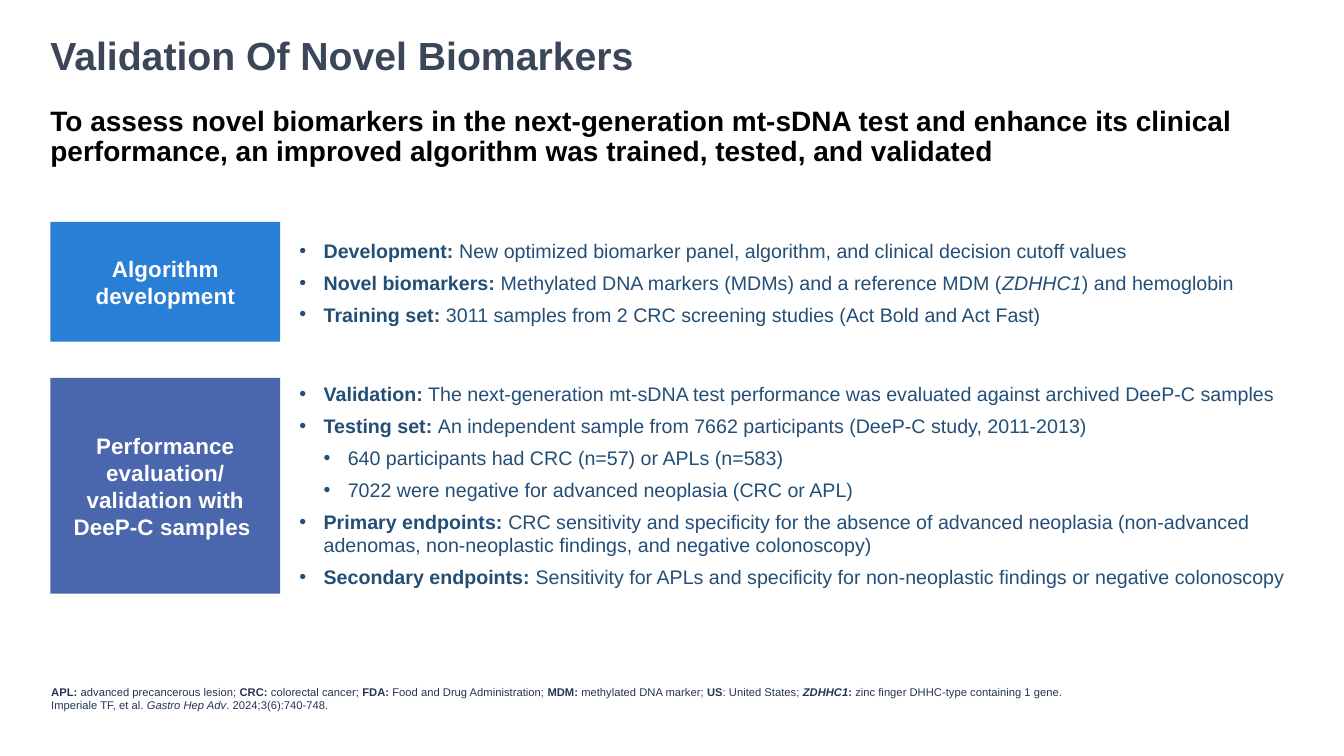
from dataclasses import dataclass

from lxml.etree import SubElement
from pptx import Presentation
from pptx.dml.color import RGBColor
from pptx.enum.shapes import MSO_SHAPE
from pptx.enum.text import MSO_ANCHOR as Anchor, PP_ALIGN as Align
from pptx.oxml.ns import qn
from pptx.slide import Slide
from pptx.text.text import TextFrame, _Paragraph as Paragraph
from pptx.util import Inches, Pt

FONT = "Arial"
WHITE = RGBColor(0xFF, 0xFF, 0xFF)
BLACK = RGBColor(0x00, 0x00, 0x00)
SLATE = RGBColor(0x3B, 0x47, 0x59)
BLUE = RGBColor(0x29, 0x7F, 0xD5)
INDIGO = RGBColor(0x4A, 0x66, 0xAC)
BODY_BLUE = RGBColor(0x23, 0x4F, 0x77)
NAVY = RGBColor(0x25, 0x33, 0x56)

LEFT, FULL_WIDTH = 0.5, 12.33
LABEL_WIDTH, LABEL_INSET = 2.28, 0.13
BULLETS_LEFT, BULLETS_WIDTH = 2.97, 9.86
BULLET_INDENT = 0.24


@dataclass(frozen=True)
class Span:
    text: str
    bold: bool = False
    italic: bool = False


@dataclass(frozen=True)
class Style:
    size: float
    color: RGBColor


@dataclass(frozen=True)
class Bullet:
    spans: list[Span]
    level: int = 0


@dataclass(frozen=True)
class Section:
    label: list[str]
    color: RGBColor
    top: float
    height: float
    bullets_top: float
    bullets_height: float
    bullets: list[Bullet]


TITLE_STYLE = Style(28, SLATE)
SUBTITLE_STYLE = Style(20, BLACK)
LABEL_STYLE = Style(16, WHITE)
BULLET_STYLE = Style(14, BODY_BLUE)
FOOTNOTE_STYLE = Style(8, NAVY)


def headed(heading: str, text: str, *more: Span) -> Bullet:
    return Bullet([Span(heading, bold=True), Span(text), *more])


SECTIONS = [
    Section(["Algorithm development"], BLUE, 2.2, 1.19, 2.36, 0.88, [
        headed("Development: ", "New optimized biomarker panel, algorithm, "
               "and clinical decision cutoff values"),
        headed("Novel biomarkers: ",
               "Methylated DNA markers (MDMs) and a reference MDM (",
               Span("ZDHHC1", italic=True), Span(") and hemoglobin")),
        headed("Training set: ", "3011 samples from 2 CRC screening studies "
               "(Act Bold and Act Fast)"),
    ]),
    Section(["Performance evaluation/", "validation with DeeP-C samples "],
            INDIGO, 3.75, 2.14, 3.78, 2.07, [
        headed("Validation:", " The next-generation mt-sDNA test performance "
               "was evaluated against archived DeeP-C samples"),
        headed("Testing set: ", "An independent sample from 7662 participants "
               "(DeeP-C study, 2011-2013)"),
        Bullet([Span("640 participants had CRC (n=57) or APLs (n=583)")], 1),
        Bullet([Span("7022 were negative for advanced neoplasia (CRC or APL)")], 1),
        headed("Primary endpoints: ", "CRC sensitivity and specificity for the "
               "absence of advanced neoplasia (non-advanced adenomas, "
               "non-neoplastic findings, and negative colonoscopy)"),
        headed("Secondary endpoints: ", "Sensitivity for APLs and specificity "
               "for non-neoplastic findings or negative colonoscopy"),
    ]),
]

FOOTNOTES = [
    [Span("APL: ", True), Span("advanced precancerous lesion; "),
     Span("CRC: ", True), Span("colorectal cancer; "),
     Span("FDA: ", True), Span("Food and Drug Administration; "),
     Span("MDM: ", True), Span("methylated DNA marker;"),
     Span(" US", True), Span(": United States; "),
     Span("ZDHHC1", True, True), Span(": ", True),
     Span("zinc finger DHHC-type containing 1 gene.")],
    [Span("Imperiale TF, et al. "), Span("Gastro Hep Adv", italic=True),
     Span(". 2024;3(6):740-748.")],
]


def add_spans(paragraph: Paragraph, spans: list[Span], style: Style) -> None:
    for span in spans:
        run = paragraph.add_run()
        run.text = span.text
        run.font.name = FONT
        run.font.size = Pt(style.size)
        run.font.color.rgb = style.color
        run.font.bold = span.bold
        run.font.italic = span.italic


def set_frame(frame: TextFrame, anchor: Anchor, inset_x: float, inset_y: float) -> None:
    frame.word_wrap = True
    frame.vertical_anchor = anchor
    frame.margin_left = frame.margin_right = Inches(inset_x)
    frame.margin_top = frame.margin_bottom = Inches(inset_y)


def add_text(slide: Slide, left: float, top: float, width: float, height: float,
             anchor: Anchor, paragraphs: list[list[Span]], style: Style,
             inset_x: float = 0, inset_y: float = 0) -> TextFrame:
    box = slide.shapes.add_textbox(Inches(left), Inches(top),
                                   Inches(width), Inches(height))
    frame = box.text_frame
    set_frame(frame, anchor, inset_x, inset_y)
    for index, spans in enumerate(paragraphs):
        paragraph = frame.add_paragraph() if index else frame.paragraphs[0]
        add_spans(paragraph, spans, style)
    return frame


def format_bullet(paragraph: Paragraph, level: int) -> None:
    paragraph.level = level
    paragraph.space_after = Pt(6)
    properties = paragraph._p.get_or_add_pPr()
    properties.set("marL", str(Inches(BULLET_INDENT * (level + 1))))
    properties.set("indent", str(-Inches(BULLET_INDENT)))
    SubElement(properties, qn("a:buFont")).set("typeface", FONT)
    SubElement(properties, qn("a:buChar")).set("char", "•")


def add_label(slide: Slide, section: Section) -> None:
    shape = slide.shapes.add_shape(
        MSO_SHAPE.RECTANGLE, Inches(LEFT), Inches(section.top),
        Inches(LABEL_WIDTH), Inches(section.height))
    shape.shadow.inherit = False
    shape.fill.solid()
    shape.fill.fore_color.rgb = section.color
    shape.line.fill.background()
    set_frame(shape.text_frame, Anchor.MIDDLE, LABEL_INSET, LABEL_INSET)
    paragraph = shape.text_frame.paragraphs[0]
    paragraph.alignment = Align.CENTER
    for index, line in enumerate(section.label):
        if index:
            paragraph.add_line_break()
        add_spans(paragraph, [Span(line, bold=True)], LABEL_STYLE)
    for run in paragraph.runs:
        run.font._element.set("spc", "10")


def add_section(slide: Slide, section: Section) -> None:
    add_label(slide, section)
    frame = add_text(slide, BULLETS_LEFT, section.bullets_top, BULLETS_WIDTH,
                     section.bullets_height, Anchor.MIDDLE,
                     [bullet.spans for bullet in section.bullets], BULLET_STYLE)
    for paragraph, bullet in zip(frame.paragraphs, section.bullets):
        format_bullet(paragraph, bullet.level)


def main() -> None:
    presentation = Presentation()
    presentation.slide_width = Inches(13.33)
    presentation.slide_height = Inches(7.5)
    slide = presentation.slides.add_slide(presentation.slide_layouts[6])

    # Title and subtitle
    add_text(slide, LEFT, 0.07, FULL_WIDTH, 0.71, Anchor.BOTTOM,
             [[Span("Validation Of Novel Biomarkers", bold=True)]], TITLE_STYLE)
    subtitle = add_text(
        slide, LEFT, 1.05, FULL_WIDTH, 0.63, Anchor.TOP,
        [[Span("To assess novel biomarkers in the next-generation mt-sDNA test "
               "and enhance its clinical performance, an improved algorithm was "
               "trained, tested, and validated", bold=True)]], SUBTITLE_STYLE)
    subtitle.paragraphs[0].line_spacing = Pt(22)
    subtitle.paragraphs[0].space_before = Pt(10)

    # Labelled sections
    for section in SECTIONS:
        add_section(slide, section)

    # Footnotes
    add_text(slide, 0.41, 6.74, 12.42, 0.37, Anchor.BOTTOM, FOOTNOTES,
             FOOTNOTE_STYLE, inset_x=0.1, inset_y=0.05)

    presentation.save("out.pptx")


if __name__ == "__main__":
    main()
